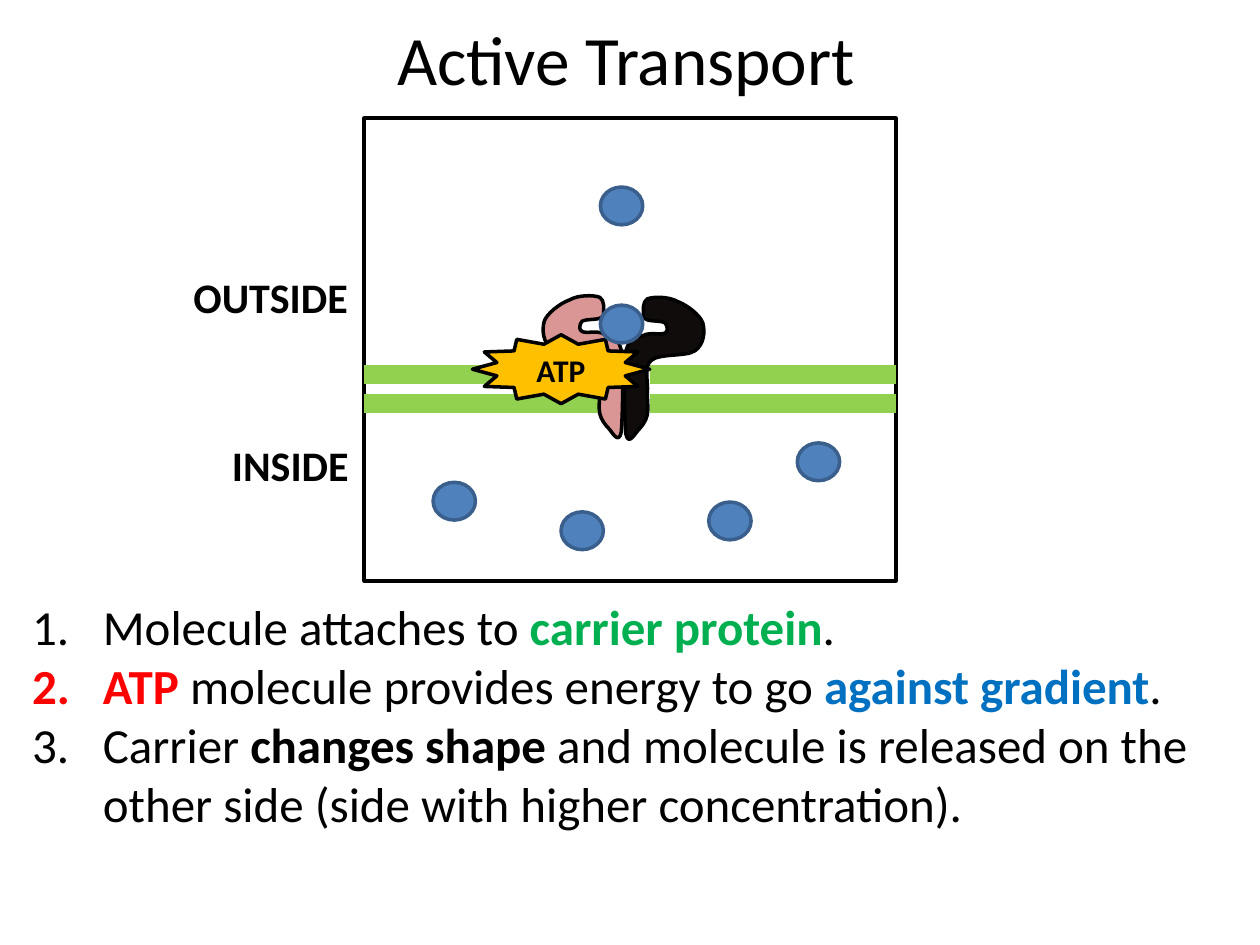
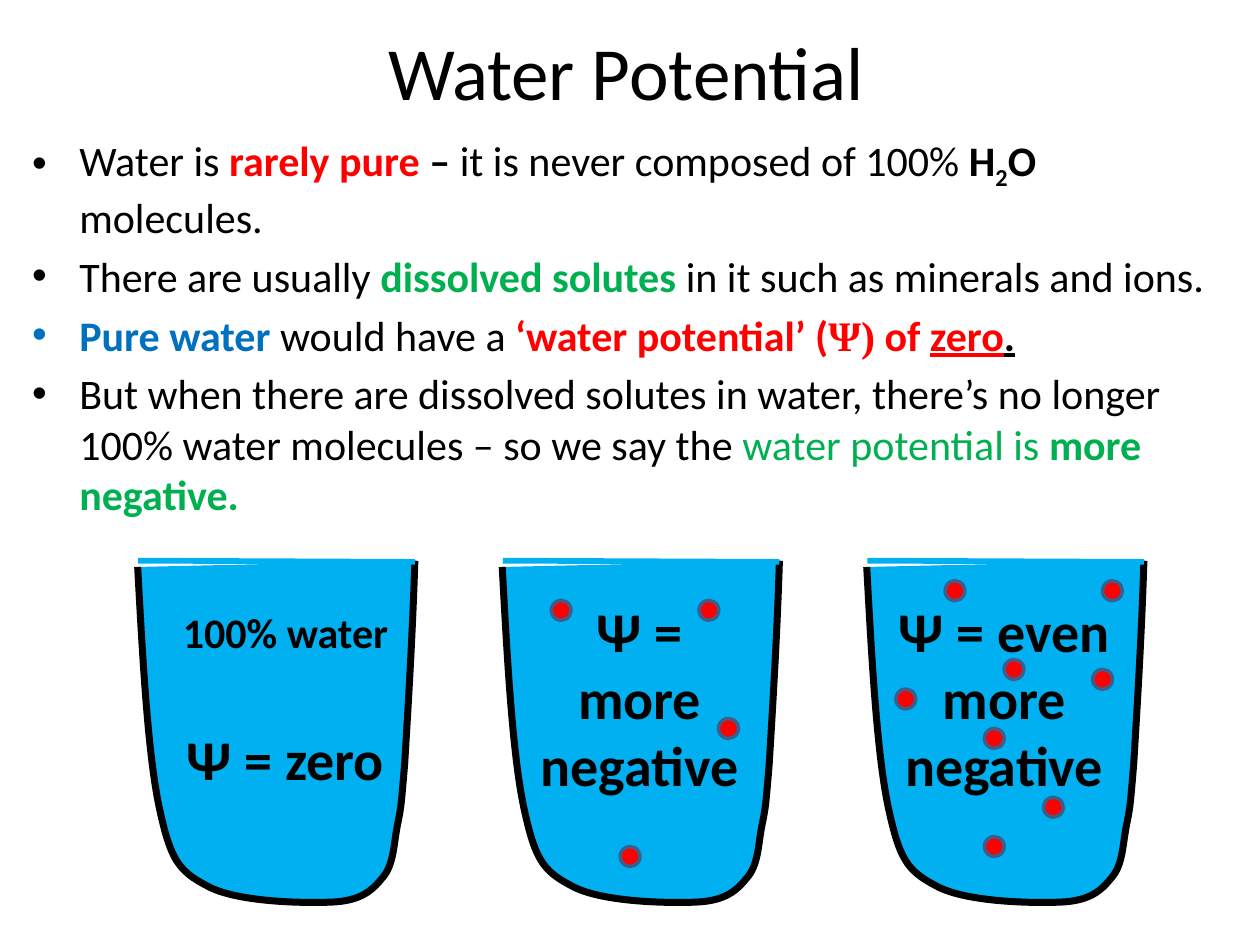
from lxml import etree
from pptx import Presentation
from pptx.dml.color import RGBColor
from pptx.enum.shapes import MSO_CONNECTOR, MSO_SHAPE
from pptx.enum.text import MSO_ANCHOR, PP_ALIGN
from pptx.oxml.ns import qn
from pptx.util import Pt

RECT, ELLIPSE, STAR = MSO_SHAPE.RECTANGLE, MSO_SHAPE.OVAL, MSO_SHAPE.STAR_12_POINT
STRAIGHT = MSO_CONNECTOR.STRAIGHT
CENTER, LEFT = PP_ALIGN.CENTER, PP_ALIGN.LEFT
TOP, MIDDLE = MSO_ANCHOR.TOP, MSO_ANCHOR.MIDDLE

FONT = "Calibri"
BLACK = RGBColor(0x00, 0x00, 0x00)
RED = RGBColor(0xFF, 0x00, 0x00)
GREEN = RGBColor(0x00, 0xB0, 0x50)
BLUE = RGBColor(0x00, 0x70, 0xC0)
MEMBRANE = RGBColor(0x92, 0xD0, 0x50)
MOLECULE = RGBColor(0x4F, 0x81, 0xBD)
RIM = RGBColor(0x3A, 0x5F, 0x8C)
PINK = RGBColor(0xD9, 0x96, 0x94)
DARK = RGBColor(0x11, 0x0C, 0x0C)
GOLD = RGBColor(0xFF, 0xC0, 0x00)
WATER = RGBColor(0x00, 0xB0, 0xF0)

# Run styles: colour, bold, then any extras
PLAIN = dict(color=BLACK, bold=False)
BOLD = dict(color=BLACK, bold=True)
RED_BOLD = dict(color=RED, bold=True)
GREEN_BOLD = dict(color=GREEN, bold=True)
BLUE_BOLD = dict(color=BLUE, bold=True)

# Content: active transport
STEPS = [
    [("Molecule attaches to ", PLAIN), ("carrier protein", GREEN_BOLD), (".", PLAIN)],
    [("ATP", RED_BOLD), (" molecule provides energy to go ", PLAIN),
     ("against gradient", BLUE_BOLD), (".", PLAIN)],
    [("Carrier ", PLAIN), ("changes shape", BOLD),
     (" and molecule is released on the other side "
      "(side with higher concentration).", PLAIN)],
]
SIDES = [("OUTSIDE", 95.6, 151.6), ("INSIDE", 106.9, 247.5)]
MOLECULES = [(455.6, 253.1), (320.6, 292.5), (405, 286.9), (247.5, 275.6), (343.1, 106.9)]
BOUND_MOLECULE = (343.1, 174.4)
MEMBRANE_ROWS = (213.8, 230.4)
MEMBRANE_SPANS = ((208.1, 343.1), (371.3, 511.9))

# Content: water potential
FACTS = [
    [("Water is ", PLAIN), ("rarely pure ", RED_BOLD), ("– ", BOLD),
     ("it is never composed of 100% ", PLAIN), ("H", BOLD),
     ("2", dict(BOLD, sub=True)), ("O ", BOLD), ("molecules.", PLAIN)],
    [("There are usually ", PLAIN), ("dissolved solutes ", GREEN_BOLD),
     ("in it such as minerals and ions.", PLAIN)],
    [("Pure water ", BLUE_BOLD), ("would have a ", PLAIN),
     ("‘water potential’ (", RED_BOLD),
     ("Ψ)", dict(RED_BOLD, font="Times New Roman")), (" of ", RED_BOLD),
     ("zero", dict(RED_BOLD, underline=True)), (".", dict(BOLD, underline=True))],
    [("But when there are dissolved solutes in water, there’s no longer "
      "100% water molecules – so we say the ", PLAIN),
     ("water potential is ", dict(color=GREEN, bold=False)),
     ("more negative.", GREEN_BOLD)],
]
# Each beaker: label offset, label lines (text, size, space before), solutes
BEAKERS = [
    ((16.9, 22.5), [("100% water", 24, 0), ("Ψ = zero", 32, 39)], []),
    ((11, 16.9), [("Ψ = more negative", 32, 0)],
     [(354.4, 483.8), (410.6, 410.6), (315, 343.1), (399.4, 343.1)]),
    ((11, 16.9), [("Ψ = even more negative", 32, 0)],
     [(540, 331.9), (596.3, 455.6), (562.5, 478.1), (562.5, 416.3),
      (624.4, 382.5), (573.8, 376.9), (630, 331.9), (511.9, 393.8)]),
]
BEAKER_LEFT, BEAKER_TOP, BEAKER_STEP, BEAKER_WIDTH = 78.7, 320.4, 208.3, 158.4

# Outlines: a start point, then Bezier curves of two controls and an end
CARRIER = (33.1, 1.4), [
    (29.5, 0, 20.9, 0, 15.8, 2.9), (10.1, 5, 2.9, 10.8, 1.4, 15.1),
    (0, 20.2, 0.7, 27.4, 5.8, 31), (10.8, 34.6, 26.6, 32.4, 31, 36.7),
    (35.3, 40.3, 32.4, 49.7, 33.1, 54.7), (33.1, 60.5, 32.4, 64.1, 33.1, 67.7),
    (33.8, 71.3, 36.7, 74.9, 38.2, 76.3), (40.3, 78.5, 43.9, 85.7, 45.4, 78.5),
    (46.1, 71.3, 46.8, 43.9, 45.4, 31.7), (43.2, 22.3, 38.9, 23.8, 35.3, 22.3),
    (31.7, 20.2, 25.2, 22.3, 23, 20.9), (20.9, 20.2, 21.6, 16.6, 23, 15.1),
    (25.2, 13.7, 32.4, 14.4, 33.8, 13), (36, 12.2, 35.3, 12.2, 35.3, 10.1),
    (35.3, 8.6, 36, 2.9, 33.1, 1.4),
]
BEAKER = (0, 3.6), [
    (2.9, 56.9, 5.8, 109.4, 12.2, 140.4), (18.7, 170.6, 23, 177.1, 39.6, 185.8),
    (56.2, 195.1, 94.3, 195.8, 110.9, 195.1), (127.4, 194.4, 133.9, 188.6, 139.7, 181.4),
    (146.2, 174.2, 146.2, 163.4, 148.3, 151.9), (150.5, 141.1, 150.5, 141.1, 152.6, 115.9),
    (154.1, 90.7, 157, 45.4, 158.4, 0),
]


def paint(sp, fill, line, width):
    sp.shadow.inherit = False
    if fill is None:
        sp.fill.background()
    else:
        sp.fill.solid()
        sp.fill.fore_color.rgb = fill
    sp.line.color.rgb = line
    sp.line.width = Pt(width)


def add_preset(s, kind, x, y, w, h, fill=None, line=BLACK):
    sp = s.shapes.add_shape(kind, Pt(x), Pt(y), Pt(w), Pt(h))
    paint(sp, fill, line, 2)


def add_line(s, x1, y1, x2, y2, color, width):
    line = s.shapes.add_connector(STRAIGHT, Pt(x1), Pt(y1), Pt(x2), Pt(y2))
    line.line.color.rgb = color
    line.line.width = Pt(width)
    etree.SubElement(line._element.spPr, qn("a:effectLst"))


def add_outline(s, outline, x, y, fill, width, close, flip=1):
    """Draw a curved freeform; flip=-1 mirrors it about x."""
    start, curves = outline
    points = [start] + [c[i:i + 2] for c in curves for i in (0, 2, 4)]
    points = [(Pt(x + flip * px), Pt(y + py)) for px, py in points]
    builder = s.shapes.build_freeform(*points[0])
    builder.add_line_segments(points[1:], close=close)
    sp = builder.convert_to_shape()
    # Join every three line segments into one Bezier curve
    segments = list(sp._element.iter(qn("a:lnTo")))
    for i in range(0, len(segments), 3):
        curve = etree.Element(qn("a:cubicBezTo"))
        segments[i].addprevious(curve)
        for segment in segments[i:i + 3]:
            curve.append(segment[0])
            segment.getparent().remove(segment)
    paint(sp, fill, BLACK, width)


def add_box(s, x, y, w, h, anchor=TOP):
    tf = s.shapes.add_textbox(Pt(x), Pt(y), Pt(w), Pt(h)).text_frame
    tf.word_wrap = True
    tf.vertical_anchor = anchor
    return tf


def add_lines(tf, lines, bold=True):
    """Centred paragraphs from (text, size, space before)."""
    for i, (text, size, before) in enumerate(lines):
        p = tf.add_paragraph() if i else tf.paragraphs[0]
        p.text = text
        p.alignment = CENTER
        p.space_before = Pt(before)
        p.font.name, p.font.size, p.font.bold = FONT, Pt(size), bold
        p.font.color.rgb = BLACK


def add_list(tf, items, size, indent, before, marker, **attrs):
    for i, runs in enumerate(items):
        p = tf.add_paragraph() if i else tf.paragraphs[0]
        p.alignment = LEFT
        p.space_before = Pt(before)
        p.font.size = Pt(size)
        pPr = p._p.get_or_add_pPr()
        pPr.set("marL", str(Pt(indent)))
        pPr.set("indent", str(-Pt(indent)))
        end = pPr.find(qn("a:defRPr"))
        if marker == "a:buChar":
            end.addprevious(etree.Element(qn("a:buFont"), typeface="Arial"))
        end.addprevious(etree.Element(qn(marker), attrs))
        for text, style in runs:
            r = p.add_run()
            r.text = text
            r.font.name = style.get("font", FONT)
            r.font.size = Pt(size)
            r.font.bold = style["bold"]
            r.font.color.rgb = style["color"]
            if "underline" in style:
                r.font.underline = True
            if "sub" in style:
                r._r.get_or_add_rPr().set("baseline", "-25000")


def add_slide(prs, title, size, top, height):
    s = prs.slides.add_slide(prs.slide_layouts[6])
    tf = add_box(s, 33.75, top, 648, height, MIDDLE)
    tf.margin_bottom = Pt(6.4)
    add_lines(tf, [(title, size, 0)], bold=False)
    tf.paragraphs[0].line_spacing = 0.9
    return s


def add_molecule(s, x, y):
    add_preset(s, ELLIPSE, x, y, 24.2, 21.6, MOLECULE, RIM)


def build_active_transport(prs):
    s = add_slide(prs, "Active Transport", 39.6, 11.3, 51.8)

    # Cell frame and membrane
    add_preset(s, RECT, 208.1, 67.5, 303.8, 264.4)
    for y in MEMBRANE_ROWS:
        for x1, x2 in MEMBRANE_SPANS:
            add_line(s, x1, y, x2, y, MEMBRANE, 10.75)
    for x, y in MOLECULES:
        add_molecule(s, x, y)
    for text, x, y in SIDES:
        add_lines(add_box(s, x, y, 118.1, 36), [(text, 24, 0)])

    # Carrier halves, ATP burst and bound molecule
    add_outline(s, CARRIER, 309.6, 168.5, PINK, 2, True)
    add_outline(s, CARRIER, 403, 169.4, DARK, 2, True, flip=-1)
    add_preset(s, STAR, 270, 191.3, 101.3, 39.4, GOLD)
    add_lines(add_box(s, 298.1, 196.9, 45, 28.8), [("ATP", 18, 0)])
    add_molecule(s, *BOUND_MOLECULE)

    # Steps
    add_list(add_box(s, 11.25, 337.5, 697.5, 143.3), STEPS, 28, 40.5, 0,
             "a:buAutoNum", type="arabicPeriod")


def build_water_potential(prs):
    s = add_slide(prs, "Water Potential", 42.9, 16.2, 56.9)
    add_list(add_box(s, 11.25, 73.1, 697.5, 455.8), FACTS, 24, 27, 4.8,
             "a:buChar", char="•")

    # Beakers
    for i, (offset, lines, solutes) in enumerate(BEAKERS):
        x = BEAKER_LEFT + i * BEAKER_STEP
        add_outline(s, BEAKER, x, BEAKER_TOP, WATER, 4, False)
        add_line(s, x + 0.3, BEAKER_TOP, x + BEAKER_WIDTH, BEAKER_TOP + 0.7, WATER, 3.25)
        add_lines(add_box(s, x + offset[0], BEAKER_TOP + offset[1], 135, 123.8), lines)
        for sx, sy in solutes:
            add_preset(s, ELLIPSE, sx, sy, 11.3, 11.3, RED, RIM)


def main():
    prs = Presentation()
    prs.slide_width, prs.slide_height = Pt(720), Pt(540)
    build_active_transport(prs)
    build_water_potential(prs)
    prs.save("out.pptx")


if __name__ == "__main__":
    main()
